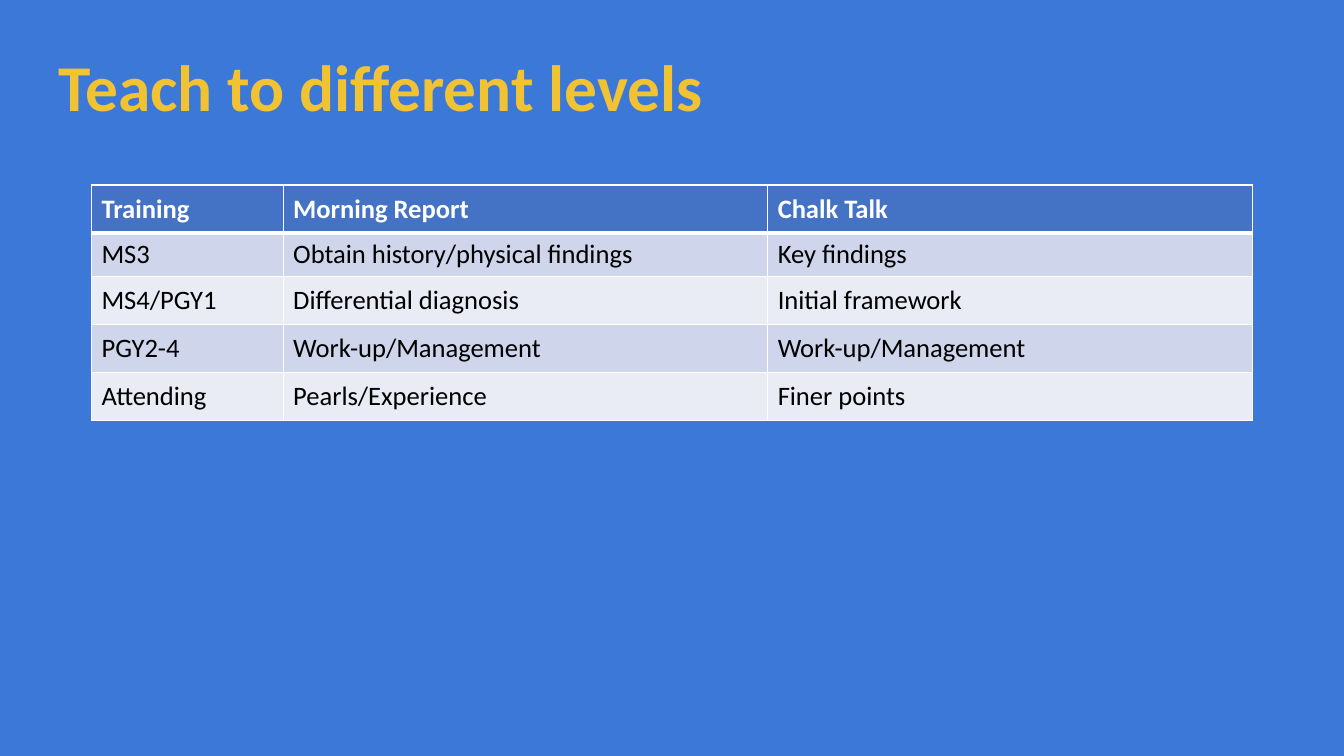
from lxml import etree
from pptx import Presentation
from pptx.dml.color import RGBColor
from pptx.enum.text import MSO_ANCHOR
from pptx.oxml.ns import qn
from pptx.util import Cm, Pt

MIDDLE = MSO_ANCHOR.MIDDLE
TOP = MSO_ANCHOR.TOP
WHITE = "FFFFFF"
ROWS = [
    ("Training", "Morning Report", "Chalk Talk"),
    ("MS3", "Obtain history/physical findings", "Key findings"),
    ("MS4/PGY1", "Differential diagnosis", "Initial framework"),
    ("PGY2-4", "Work-up/Management", "Work-up/Management"),
    ("Attending", "Pearls/Experience", "Finer points"),
]
COLUMN_WIDTHS = [Cm(4.83), Cm(12.21), Cm(12.21)]
ROW_HEIGHTS = [Cm(1.21), Cm(1.1), Cm(1.21), Cm(1.21), Cm(1.21)]


def color(hex_string):
    return RGBColor.from_string(hex_string)


def write(text_frame, text, size, text_color, bold=False, line_spacing=1.0):
    paragraph = text_frame.paragraphs[0]
    paragraph.line_spacing = line_spacing
    run = paragraph.add_run()
    run.text = text
    run.font.name = "Calibri"
    run.font.size = Pt(size)
    run.font.bold = bold
    run.font.color.rgb = color(text_color)


presentation = Presentation()
presentation.slide_width = Cm(33.87)
presentation.slide_height = Cm(19.05)
slide = presentation.slides.add_slide(presentation.slide_layouts[6])
slide.background.fill.solid()
slide.background.fill.fore_color.rgb = color("3C78D8")

title = slide.shapes.add_textbox(Cm(1.14), Cm(1.04), Cm(31.55), Cm(2.13))
title_frame = title.text_frame
title_frame.word_wrap = True
title_frame.vertical_anchor = TOP
title_frame.margin_left = title_frame.margin_right = Cm(0.34)
title_frame.margin_top = title_frame.margin_bottom = Cm(0.34)
write(title_frame, "Teach to different levels", size=46.7,
      text_color="F1C232", bold=True, line_spacing=0.9)

table = slide.shapes.add_table(
    len(ROWS), len(COLUMN_WIDTHS), Cm(2.31), Cm(4.66),
    sum(COLUMN_WIDTHS), sum(ROW_HEIGHTS)).table
for column, width in zip(table.columns, COLUMN_WIDTHS):
    column.width = width

for row_index, texts in enumerate(ROWS):
    table.rows[row_index].height = ROW_HEIGHTS[row_index]
    is_header = row_index == 0
    if is_header:
        row_fill = "4472C4"
    else:
        row_fill = "CFD5EA" if row_index % 2 else "E9EBF5"
    border_widths = {
        "a:lnL": 1,
        "a:lnR": 1,
        "a:lnT": 3 if row_index == 1 else 1,
        "a:lnB": 3 if is_header else 1,
    }
    for column_index, text in enumerate(texts):
        cell = table.cell(row_index, column_index)
        cell.vertical_anchor = MIDDLE
        cell.margin_left = cell.margin_right = Cm(0.25)
        cell.margin_top = cell.margin_bottom = Cm(0.13)
        write(cell.text_frame, text, size=19, bold=is_header,
              text_color=WHITE if is_header else "000000")
        properties = cell._tc.get_or_add_tcPr()
        for tag, width in border_widths.items():
            border = etree.SubElement(properties, qn(tag), w=str(Pt(width)))
            border_fill = etree.SubElement(border, qn("a:solidFill"))
            etree.SubElement(border_fill, qn("a:srgbClr"), val=WHITE)
        cell.fill.solid()
        cell.fill.fore_color.rgb = color(row_fill)

presentation.save("out.pptx")
